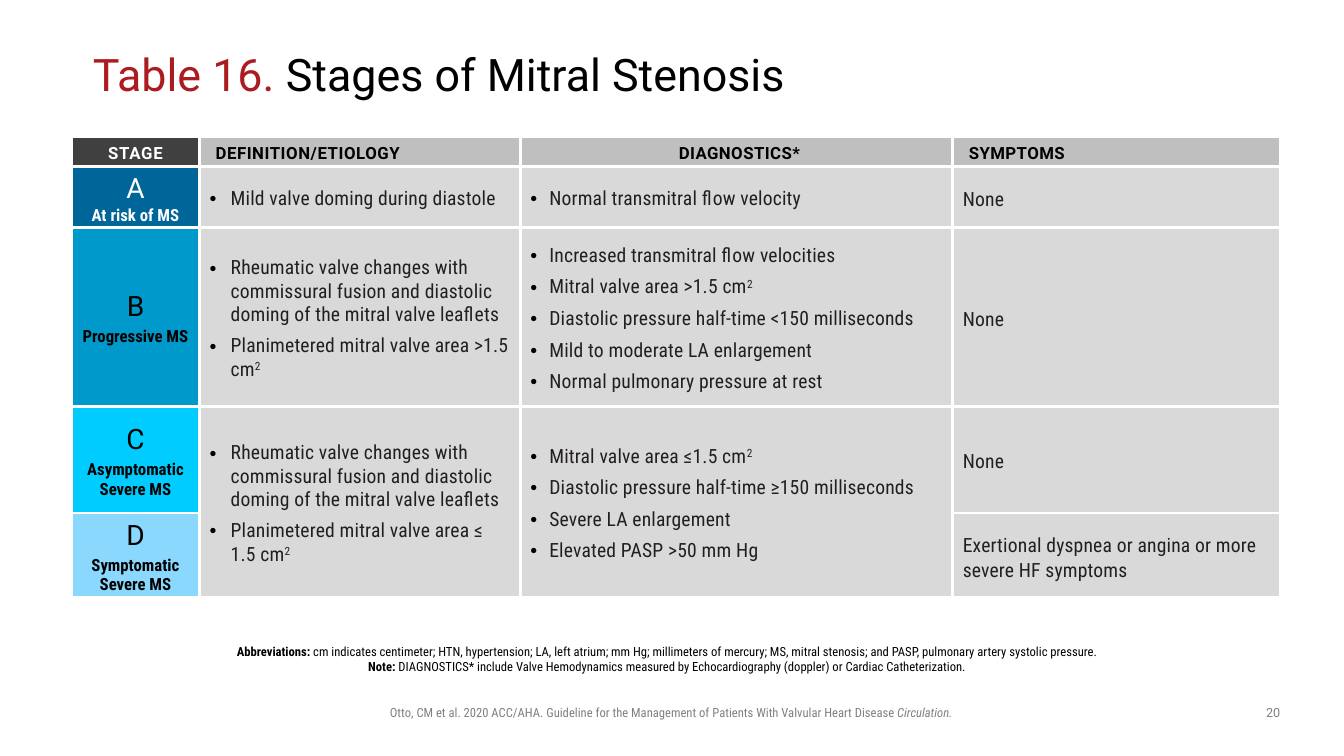
from dataclasses import dataclass

import lxml.etree
import pptx
import pptx.dml.color
import pptx.enum.text
import pptx.oxml.ns
import pptx.slide
import pptx.table
import pptx.text.text
import pptx.util
from pptx.util import Cm

COLORS = {
    "red": "AC1B1F", "black": "000000", "white": "FFFFFF", "gray": "808080",
    "body": "231F20", "cell": "D9D9D9", "header": "BFBFBF", "dark": "404040",
    "A": "006699", "B": "0099CC", "C": "00CCFF", "D": "8BD8FF",
}
REGULAR = "Roboto"
CONDENSED = "Roboto Condensed"
COLUMN_WIDTHS = (3.23, 8.08, 10.9, 8.26)
ROW_HEIGHTS = (0.74, 1.55, 4.5, 2.69, 2.13)
CENTER = pptx.enum.text.PP_ALIGN.CENTER
LEFT = pptx.enum.text.PP_ALIGN.LEFT
MIDDLE = pptx.enum.text.MSO_ANCHOR.MIDDLE
qn = pptx.oxml.ns.qn


@dataclass
class Header:
    text: str
    fill: str = "header"
    color: str = "black"
    centered: bool = False
    indent: float = 0.15
    spacing: int = 40


@dataclass
class Stage:
    letter: str
    caption: str
    symptoms: str
    definition: tuple[str, ...] = ()
    diagnostics: tuple[str, ...] = ()
    color: str = "black"
    caption_gap: float = 2.5


RHEUMATIC = ("Rheumatic valve changes with commissural fusion and diastolic "
             "doming of the mitral valve leaflets")

HEADERS = (
    Header("STAGE", "dark", "white", centered=True, indent=0, spacing=50),
    Header("DEFINITION/ETIOLOGY"),
    Header("DIAGNOSTICS*", centered=True, spacing=30),
    Header("SYMPTOMS", spacing=30),
)

# A caret marks the digit that is raised; C and D share two merged cells
STAGES = (
    Stage("A", "At risk of MS", "None",
          ("Mild valve doming during diastole",),
          ("Normal transmitral flow velocity",), color="white", caption_gap=0),
    Stage("B", "Progressive MS", "None",
          (RHEUMATIC, "Planimetered mitral valve area >1.5 cm^2"),
          ("Increased transmitral flow velocities",
           "Mitral valve area >1.5 cm^2",
           "Diastolic pressure half-time <150 milliseconds",
           "Mild to moderate LA enlargement",
           "Normal pulmonary pressure at rest")),
    Stage("C", "Asymptomatic Severe MS", "None",
          (RHEUMATIC, "Planimetered mitral valve area ≤ 1.5 cm^2"),
          ("Mitral valve area ≤1.5 cm^2",
           "Diastolic pressure half-time ≥150 milliseconds",
           "Severe LA enlargement",
           "Elevated PASP >50 mm Hg")),
    Stage("D", "Symptomatic Severe MS",
          "Exertional dyspnea or angina or more severe HF symptoms"),
)


def rgb(name: str) -> pptx.dml.color.RGBColor:
    return pptx.dml.color.RGBColor.from_string(COLORS[name])


def add_text(paragraph: pptx.text.text._Paragraph, text: str, *, size: float,
             font: str = CONDENSED, color: str = "black", bold: bool = False,
             italic: bool = False, spacing: int = 0, raised: bool = False) -> None:
    run = paragraph.add_run()
    run.text = text
    run.font.size = pptx.util.Pt(size)
    run.font.name = font
    run.font.color.rgb = rgb(color)
    run.font.bold = bold
    run.font.italic = italic
    properties = run.font._element
    if spacing:
        properties.set("spc", str(spacing))
    if raised:
        properties.set("baseline", "30000")


def next_paragraph(frame: pptx.text.text.TextFrame) -> pptx.text.text._Paragraph:
    first = frame.paragraphs[0]
    return frame.add_paragraph() if first.runs else first


def add_bullets(cell: pptx.table._Cell, items: tuple[str, ...], indent: float) -> None:
    for item in items:
        paragraph = next_paragraph(cell.text_frame)
        properties = paragraph._p.get_or_add_pPr()
        properties.set("marL", str(Cm(indent)))
        properties.set("indent", str(-Cm(indent)))
        bullet_color = lxml.etree.SubElement(properties, qn("a:buClr"))
        lxml.etree.SubElement(bullet_color, qn("a:srgbClr"), val=COLORS["black"])
        lxml.etree.SubElement(properties, qn("a:buFont"), typeface="Arial")
        lxml.etree.SubElement(properties, qn("a:buChar"), char="•")
        paragraph.space_after = pptx.util.Pt(6)
        base, _, exponent = item.partition("^")
        add_text(paragraph, base, size=14, color="body", spacing=10)
        if exponent:
            add_text(paragraph, exponent, size=14, color="body", spacing=10, raised=True)


def style_cell(cell: pptx.table._Cell, fill: str) -> None:
    cell.fill.solid()
    cell.fill.fore_color.rgb = rgb(fill)
    cell.vertical_anchor = MIDDLE
    cell.margin_top = pptx.util.Pt(2.5)
    cell.margin_bottom = 0
    properties = cell._tc.get_or_add_tcPr()
    for position, side in enumerate(("lnL", "lnR", "lnT", "lnB")):
        line = lxml.etree.Element(qn(f"a:{side}"), w=str(pptx.util.Pt(2.25)))
        line_fill = lxml.etree.SubElement(line, qn("a:solidFill"))
        lxml.etree.SubElement(line_fill, qn("a:srgbClr"), val=COLORS["white"])
        properties.insert(position, line)


def add_box(slide: pptx.slide.Slide, left: float, top: float, width: float,
            height: float) -> pptx.text.text.TextFrame:
    shape = slide.shapes.add_textbox(Cm(left), Cm(top), Cm(width), Cm(height))
    shape.text_frame.word_wrap = True
    return shape.text_frame


def add_stage_table(slide: pptx.slide.Slide) -> None:
    table = slide.shapes.add_table(
        len(ROW_HEIGHTS), len(COLUMN_WIDTHS), Cm(1.8), Cm(3.45),
        Cm(sum(COLUMN_WIDTHS)), Cm(sum(ROW_HEIGHTS))).table
    table.horz_banding = False
    table.first_row = False
    for column, width in zip(table.columns, COLUMN_WIDTHS):
        column.width = Cm(width)
    for row, height in zip(table.rows, ROW_HEIGHTS):
        row.height = Cm(height)

    # Header row
    for column, header in enumerate(HEADERS):
        cell = table.cell(0, column)
        style_cell(cell, header.fill)
        paragraph = cell.text_frame.paragraphs[0]
        paragraph.alignment = CENTER if header.centered else LEFT
        paragraph._p.get_or_add_pPr().set("marL", str(Cm(header.indent)))
        add_text(paragraph, header.text, size=12, font=REGULAR, color=header.color,
                 bold=True, spacing=header.spacing)

    # One row for each stage
    for row, stage in enumerate(STAGES, start=1):
        name, definition, diagnostics, symptoms = (
            table.cell(row, column) for column in range(len(HEADERS)))
        style_cell(name, stage.letter)
        for cell in (definition, diagnostics, symptoms):
            style_cell(cell, "cell")
        letter = name.text_frame.paragraphs[0]
        add_text(letter, stage.letter, size=20, font=REGULAR, color=stage.color)
        caption = name.text_frame.add_paragraph()
        caption.space_before = pptx.util.Pt(stage.caption_gap)
        add_text(caption, stage.caption, size=12, color=stage.color, bold=True)
        letter.alignment = caption.alignment = CENTER
        add_bullets(definition, stage.definition, indent=0.53)
        add_bullets(diagnostics, stage.diagnostics, indent=0.48)
        paragraph = symptoms.text_frame.paragraphs[0]
        paragraph.line_spacing = 1.07
        add_text(paragraph, stage.symptoms, size=14, color="body", spacing=10)
    for column in (1, 2):
        table.cell(3, column).merge(table.cell(4, column))


def main() -> None:
    presentation = pptx.Presentation()
    presentation.slide_width = Cm(33.87)
    presentation.slide_height = Cm(19.05)
    slide = presentation.slides.add_slide(presentation.slide_layouts[6])

    # Title
    frame = add_box(slide, 2.34, 1.02, 29.21, 1.83)
    frame.margin_left = frame.margin_right = frame.margin_top = frame.margin_bottom = 0
    frame.vertical_anchor = MIDDLE
    title = frame.paragraphs[0]
    title.line_spacing = 0.9
    add_text(title, "Table 16. ", size=32, font=REGULAR, color="red")
    add_text(title, "Stages of Mitral Stenosis", size=32, font=REGULAR)

    add_stage_table(slide)

    # Abbreviations and note
    frame = add_box(slide, 5.59, 16.1, 22.68, 0.76)
    frame.margin_left = 0
    for label, text in (
        ("Abbreviations: ", "cm indicates centimeter; HTN, hypertension; LA, left atrium; "
         "mm Hg; millimeters of mercury; MS, mitral stenosis; and PASP, pulmonary artery "
         "systolic pressure."),
        ("Note: ", "DIAGNOSTICS* include Valve Hemodynamics measured by Echocardiography "
         "(doppler) or Cardiac Catheterization."),
    ):
        paragraph = next_paragraph(frame)
        paragraph.alignment = CENTER
        add_text(paragraph, label, size=9, bold=True)
        add_text(paragraph, text, size=9)

    # Citation and page number
    citation = add_box(slide, 8.05, 17.65, 17.73, 0.64).paragraphs[0]
    citation.alignment = CENTER
    add_text(citation, "Otto, CM et al. 2020 ACC/AHA. Guideline for the Management of "
             "Patients With Valvular Heart Disease ", size=9, color="gray")
    add_text(citation, "Circulation.", size=9, color="gray", italic=True)
    page_number = add_box(slide, 31.55, 17.65, 1.07, 0.66).paragraphs[0]
    page_number.alignment = CENTER
    add_text(page_number, "20", size=9, font=REGULAR, color="gray")

    presentation.save("out.pptx")


if __name__ == "__main__":
    main()
